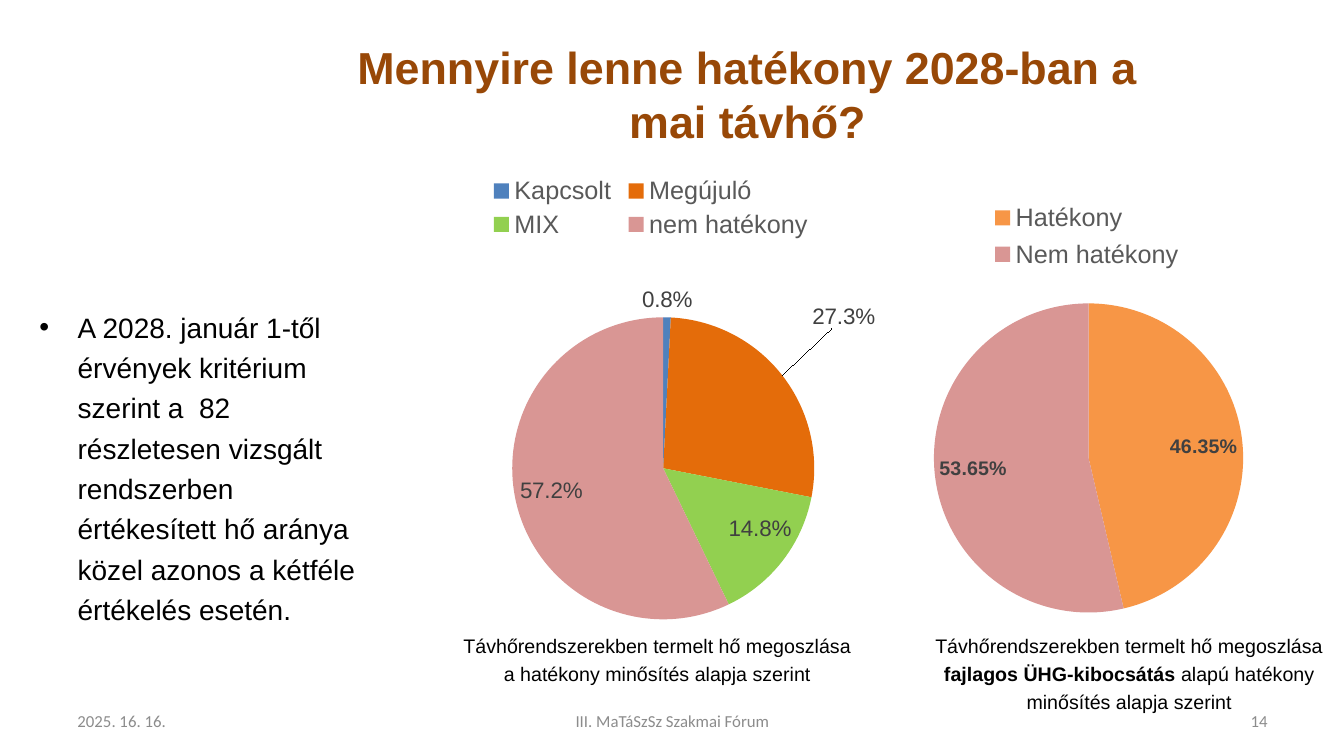
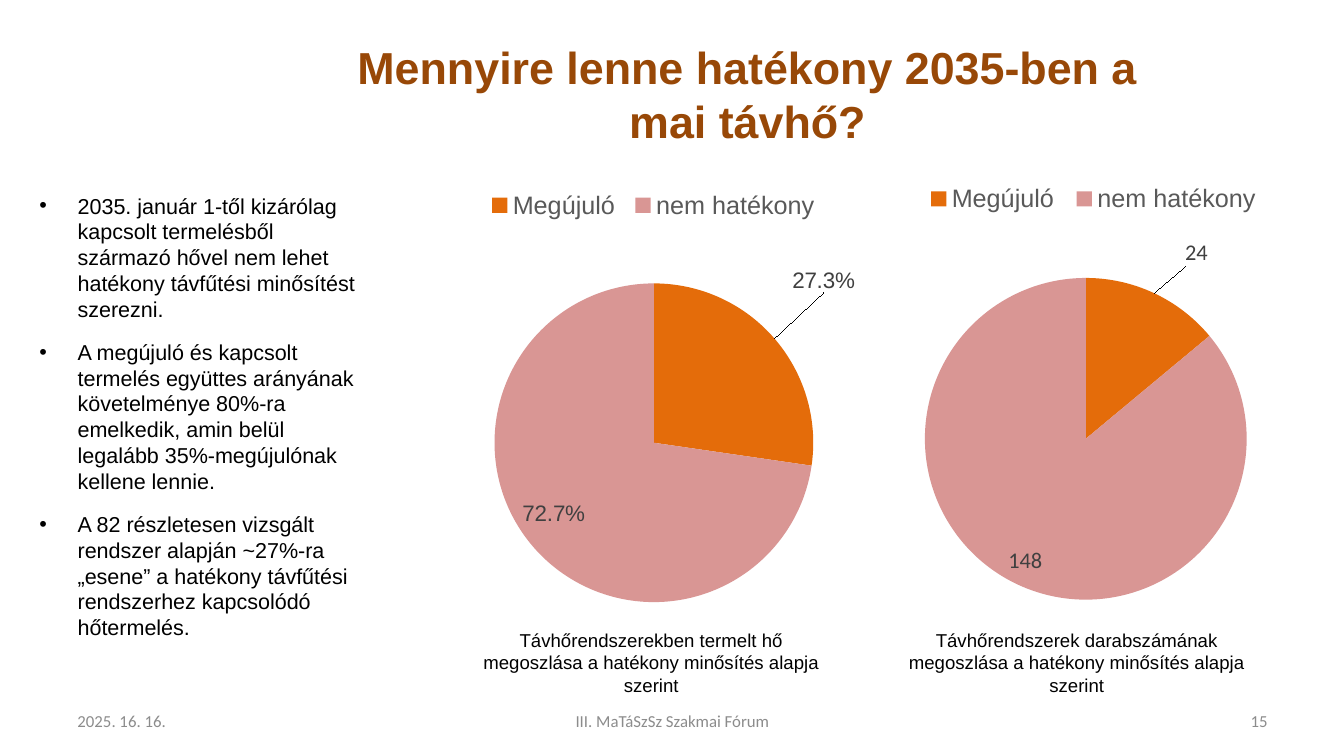
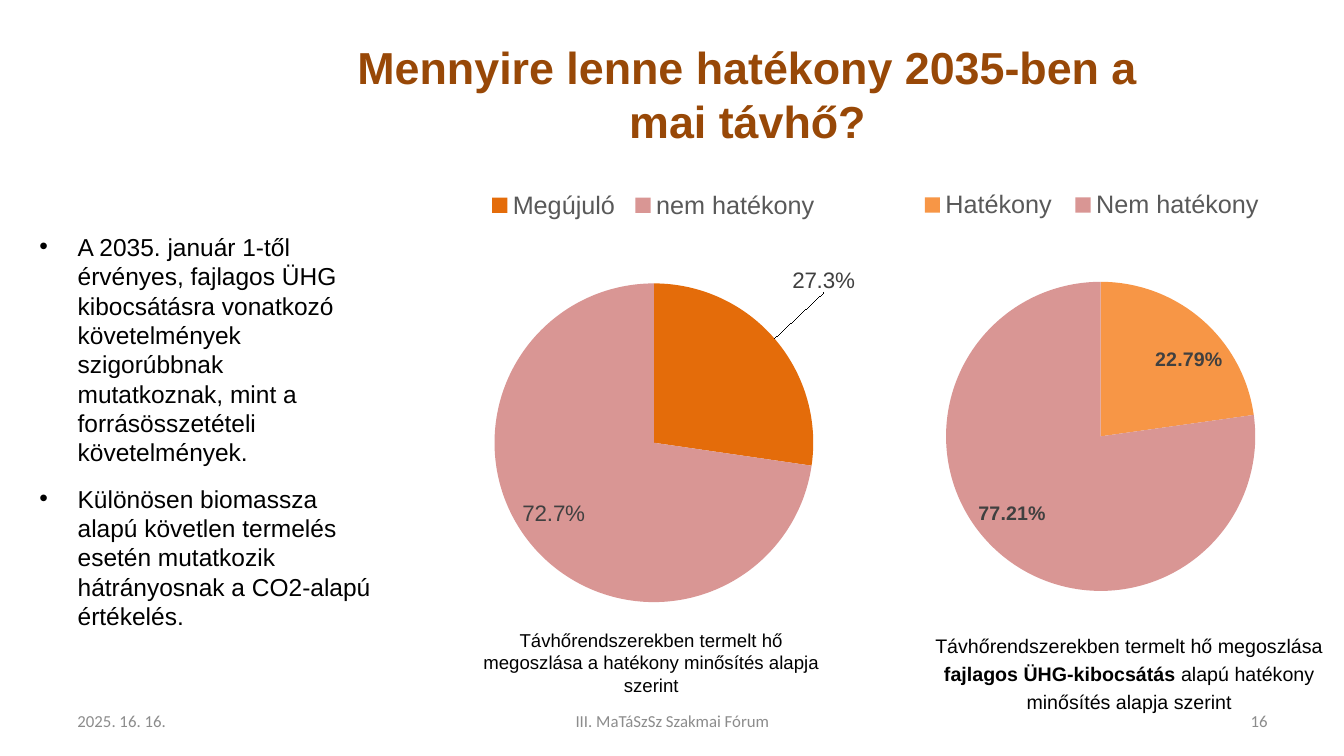
"""Build three slides on the efficiency of district heating, each with two pie charts."""
from lxml import etree
from pptx import Presentation
from pptx.chart.data import CategoryChartData as Data
from pptx.dml.color import RGBColor as RGB
from pptx.enum.chart import XL_CHART_TYPE as Kind, XL_LABEL_POSITION as Spot, XL_LEGEND_POSITION as Side
from pptx.enum.text import MSO_ANCHOR as Anchor, MSO_AUTO_SIZE as Fit, PP_ALIGN as Align
from pptx.oxml.ns import qn
from pptx.util import Inches, Pt

HUES = {
    "title": "984807", "text": "000000", "foot": "8C8C8C", "key": "595959", "label": "404040",
    "Kapcsolt": "4F81BD", "Megújuló": "E46C0A", "MIX": "92D050", "nem hatékony": "D99694",
    "Hatékony": "F79646", "Nem hatékony": "D99694",
}
FOOT = [
    (0.67, 3.11, Align.LEFT, "2025. 16. 16."),
    (4.56, 4.22, Align.CENTER, "III. MaTáSzSz Szakmai Fórum"),
    (9.56, 3.11, Align.RIGHT, "{}"),
]
HEAT = "Távhőrendszerekben termelt hő megoszlása "
BASIS = "a hatékony minősítés alapja szerint"
GAS = dict(box=(9.13, 6.19, 4.14, 0.59), size=14, space=1.2,
           parts=[HEAT, "fajlagos ÜHG-kibocsátás ", "alapú hatékony minősítés alapja szerint"])
MIX = dict(box=(4.46, 6.19, 4.12, 0.76), size=14, space=1.2, parts=[HEAT + BASIS])
SHARE = dict(MIX, box=(4.56, 6.19, 3.8, 0.76), size=13.3, space=1)
COUNT = dict(SHARE, box=(8.78, 6.19, 3.8, 0.76),
             parts=["Távhőrendszerek darabszámának megoszlása " + BASIS])

MIX_PIE = dict(
    box=(4.23, 1.61, 4.45, 4.75), vals={"Kapcsolt": 0.008, "Megújuló": 0.273, "MIX": 0.148, "nem hatékony": 0.572},
    plot=(0.159, 0.324, 0.738, 0.631), key=(0.13, 0.02, 0.74, 0.15),
    form="0.0%", font="Arial", size=16, bold=False, shift=(1, 0.1, -0.09))
SHARE_PIE = dict(
    MIX_PIE, box=(4.44, 1.15, 4.04, 5.21), vals={"Megújuló": 0.273, "nem hatékony": 0.727},
    plot=(0.115, 0.319, 0.783, 0.607), key=(0.08, 0.135, 0.85, 0.07), shift=(0, 0.11, -0.08))
COUNT_PIE = dict(
    MIX_PIE, box=(8.48, 1.12, 4.73, 5.25), vals={"Megújuló": 24, "nem hatékony": 148},
    plot=(0.146, 0.312, 0.676, 0.608), key=(0.13, 0.13, 0.74, 0.065),
    form="General", font="Calibri", shift=(0, 0.06, -0.04))
GAS_PIE = dict(
    box=(8.48, 1.68, 4.69, 4.73), vals={"Hatékony": 0.4635, "Nem hatékony": 0.5365},
    plot=(0.167, 0.281, 0.654, 0.649), key=(0.28, 0.055, 0.42, 0.17),
    form="0.00%", font="Arial", size=14, bold=True, shift=None)
LATE_PIE = dict(GAS_PIE, box=(8.6, 1.23, 4.69, 5.12), vals={"Hatékony": 0.2279, "Nem hatékony": 0.7721},
                key=(0.09, 0.122, 0.77, 0.07))

SLIDES = [
    dict(title="Mennyire lenne hatékony 2028-ban a mai távhő?", top=2.96, size=20, space=1.2,
         points=["A 2028. január 1-től érvények kritérium szerint a  82 részletesen vizsgált rendszerben "
                 "értékesített hő aránya közel azonos a kétféle értékelés esetén."],
         pies=[MIX_PIE, GAS_PIE], notes=[MIX, GAS]),
    dict(title="Mennyire lenne hatékony 2035-ben a mai távhő?", top=1.86, size=15.4, space=1,
         points=["2035. január 1-től kizárólag kapcsolt termelésből származó hővel nem lehet hatékony "
                 "távfűtési minősítést szerezni.",
                 "A megújuló és kapcsolt termelés együttes arányának követelménye 80%-ra emelkedik, "
                 "amin belül legalább 35%-megújulónak kellene lennie.",
                 "A 82 részletesen vizsgált rendszer alapján ~27%-ra „esene” a hatékony távfűtési "
                 "rendszerhez kapcsolódó hőtermelés."],
         pies=[COUNT_PIE, SHARE_PIE], notes=[COUNT, SHARE]),
    dict(title="Mennyire lenne hatékony 2035-ben a mai távhő?", top=2.25, size=17.5, space=1,
         points=["A 2035. január 1-től érvényes, fajlagos ÜHG kibocsátásra vonatkozó követelmények "
                 "szigorúbbnak mutatkoznak, mint a forrásösszetételi követelmények.",
                 "Különösen biomassza alapú követlen termelés esetén mutatkozik hátrányosnak a "
                 "CO2-alapú értékelés."],
         pies=[SHARE_PIE, LATE_PIE], notes=[SHARE, GAS]),
]


def style(font, size, hue, name="Arial", bold=False):
    """Set size, colour, face and weight of a font."""
    font.size, font.name, font.bold = Pt(size), name, bold
    font.color.rgb = RGB.from_string(HUES[hue])


def place(node, spot, **vals):
    """Give a chart part a manual layout at the given child index."""
    for old in node.findall(qn("c:layout")):
        node.remove(old)
    outer = etree.Element(qn("c:layout"))
    inner = etree.SubElement(outer, qn("c:manualLayout"))
    for tag, val in vals.items():
        etree.SubElement(inner, qn("c:" + tag)).set("val", str(val))
    node.insert(spot, outer)


deck = Presentation()
deck.slide_width, deck.slide_height = Inches(13.33), Inches(7.5)
layout = deck.slide_layouts[1]

for num, page in enumerate(SLIDES, 14):
    slide = deck.slides.add_slide(layout)
    title, body = slide.placeholders
    boxes = [(title, (3.2, 0.3, 8.43, 1.25)), (body, (0.29, page["top"], 3.49, 6.74 - page["top"]))]
    for shape, box in boxes:
        shape.left, shape.top, shape.width, shape.height = map(Inches, box)
        shape.text_frame.auto_size = Fit.NONE
        shape.text_frame.word_wrap = True

    title.text_frame.text = page["title"]
    title.text_frame.vertical_anchor = Anchor.MIDDLE
    para = title.text_frame.paragraphs[0]
    para.alignment = Align.CENTER
    style(para.runs[0].font, 32, "title", bold=True)

    body.text_frame.text = "\n".join(page["points"])
    for para in body.text_frame.paragraphs:
        props = para._p.get_or_add_pPr()
        props.set("marL", str(Inches(0.38)))
        props.set("indent", str(-Inches(0.38)))
        para.line_spacing = page["space"]
        para.space_before, para.space_after = Pt(0), Pt(12)
        style(para.runs[0].font, page["size"], "text")

    for left, width, align, text in FOOT:
        frame = slide.shapes.add_textbox(Inches(left), Inches(6.95), Inches(width), Inches(0.4)).text_frame
        frame.word_wrap = True
        frame.vertical_anchor = Anchor.MIDDLE
        frame.text = text.format(num)
        para = frame.paragraphs[0]
        para.alignment = align
        style(para.runs[0].font, 12, "foot", "Calibri")

    for pie in page["pies"]:
        data = Data(number_format=pie["form"])
        data.categories = list(pie["vals"])
        data.add_series("Series 1", list(pie["vals"].values()))
        chart = slide.shapes.add_chart(Kind.PIE, *map(Inches, pie["box"]), data).chart
        chart.has_title = False
        style(chart.font, pie["size"], "text", pie["font"])
        chart.has_legend = True
        key = chart.legend
        key.position, key.include_in_layout = Side.TOP, False
        style(key.font, 18, "key")
        x, y, w, h = pie["key"]
        place(key._element, 1, xMode="edge", yMode="edge", x=x, y=y, w=w, h=h)
        plot = chart.plots[0]
        plot.vary_by_categories = True
        x, y, w, h = pie["plot"]
        place(plot._element.getparent(), 0, layoutTarget="inner", xMode="edge", yMode="edge", x=x, y=y, w=w, h=h)

        series = plot.series[0]
        for i, name in enumerate(pie["vals"]):
            fill = series.points[i].format.fill
            fill.solid()
            fill.fore_color.rgb = RGB.from_string(HUES[name])
        labels = series.data_labels
        labels.show_value = True
        labels.number_format, labels.number_format_is_linked = pie["form"], False
        labels.position = Spot.BEST_FIT
        style(labels.font, pie["size"], "label", pie["font"], pie["bold"])
        if pie["shift"]:
            i, x, y = pie["shift"]
            label = series.points[i].data_label
            style(label.font, pie["size"], "label", pie["font"])
            label.position = Spot.BEST_FIT
            place(labels._element.find(qn("c:dLbl")), 1, x=x, y=y)

    for note in page["notes"]:
        frame = slide.shapes.add_textbox(*map(Inches, note["box"])).text_frame
        frame.word_wrap = True
        para = frame.paragraphs[0]
        para.alignment, para.line_spacing, para.space_after = Align.CENTER, note["space"], Pt(12)
        for i, part in enumerate(note["parts"]):
            run = para.add_run()
            run.text = part
            style(run.font, note["size"], "text", bold=i == 1)

deck.save("out.pptx")
